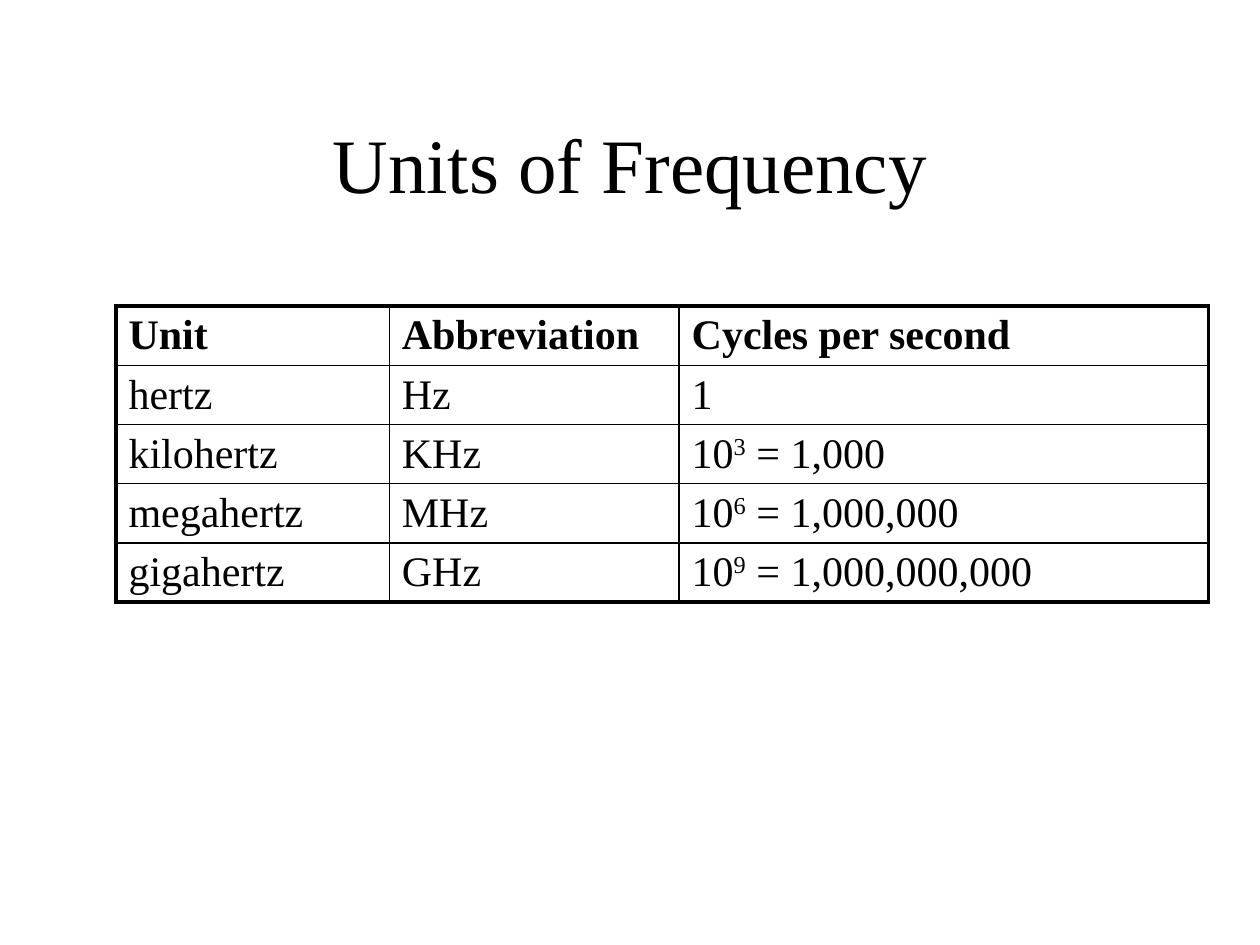
from lxml.etree import SubElement
from pptx import Presentation
from pptx.dml.color import RGBColor
from pptx.enum.text import MSO_ANCHOR, PP_ALIGN
from pptx.oxml.ns import qn
from pptx.util import Inches, Pt

COLORS = {"ink": "000000", "paper": "FFFFFF"}
COLUMN_WIDTHS = [2.17, 2.3, 4.2]
ROW_HEIGHT = 0.47
UNITS = [
    ("Unit", "Abbreviation", "Cycles per second"),
    ("hertz", "Hz", "1"),
    ("kilohertz", "KHz", ("10", "3", " = 1,000")),
    ("megahertz", "MHz", ("10", "6", " = 1,000,000")),
    ("gigahertz", "GHz", ("10", "9", " = 1,000,000,000")),
]


class SlideBuilder:
    font = "Times New Roman"
    title_size = 44
    table_size = 24
    inner_line = 1
    outer_line = 2.25

    def __init__(self, deck):
        self.page = deck.slides.add_slide(deck.slide_layouts[5])
        self.page.background.fill.solid()
        self.page.background.fill.fore_color.rgb = RGBColor.from_string(COLORS["paper"])

    def span(self, para, text, size, bold=False, raised=False):
        span = para.add_run()
        span.text = text
        span.font.name = self.font
        span.font.size = Pt(size)
        span.font.bold = bold
        span.font.color.rgb = RGBColor.from_string(COLORS["ink"])
        if raised:
            span.font._element.set("baseline", "30000")

    def title(self, text, left, top, width, height):
        box = self.page.shapes.title
        box.left, box.top = Inches(left), Inches(top)
        box.width, box.height = Inches(width), Inches(height)
        box.text_frame.vertical_anchor = MSO_ANCHOR.MIDDLE
        para = box.text_frame.paragraphs[0]
        para.alignment = PP_ALIGN.CENTER
        self.span(para, text, self.title_size)

    def borders(self, cell, outer_sides):
        properties = cell._tc.get_or_add_tcPr()
        for side, is_outer in outer_sides.items():
            width = self.outer_line if is_outer else self.inner_line
            line = SubElement(properties, qn(f"a:ln{side}"), w=str(Pt(width)))
            fill = SubElement(line, qn("a:solidFill"))
            SubElement(fill, qn("a:srgbClr"), val=COLORS["ink"])

    def table(self, rows, left, top, widths, row_height):
        last_row, last_column = len(rows) - 1, len(widths) - 1
        frame = self.page.shapes.add_table(
            len(rows), len(widths), Inches(left), Inches(top),
            Inches(sum(widths)), Inches(row_height * len(rows)))
        table = frame.table
        table.first_row = table.horz_banding = False
        for column, width in zip(table.columns, widths):
            column.width = Inches(width)
        for r, values in enumerate(rows):
            table.rows[r].height = Inches(row_height)
            for c, value in enumerate(values):
                cell = table.cell(r, c)
                self.borders(cell, {"L": c == 0, "R": c == last_column,
                                    "T": r == 0, "B": r == last_row})
                cell.fill.background()
                parts = (value,) if isinstance(value, str) else value
                for i, part in enumerate(parts):
                    self.span(cell.text_frame.paragraphs[0], part,
                              self.table_size, bold=r == 0, raised=i == 1)


def main():
    deck = Presentation()
    deck.slide_width, deck.slide_height = Inches(10), Inches(7.5)
    builder = SlideBuilder(deck)
    builder.title("Units of Frequency", 0.75, 0.67, 8.5, 1.25)
    builder.table(UNITS, 0.92, 2.43, COLUMN_WIDTHS, ROW_HEIGHT)
    deck.save("out.pptx")


if __name__ == "__main__":
    main()
